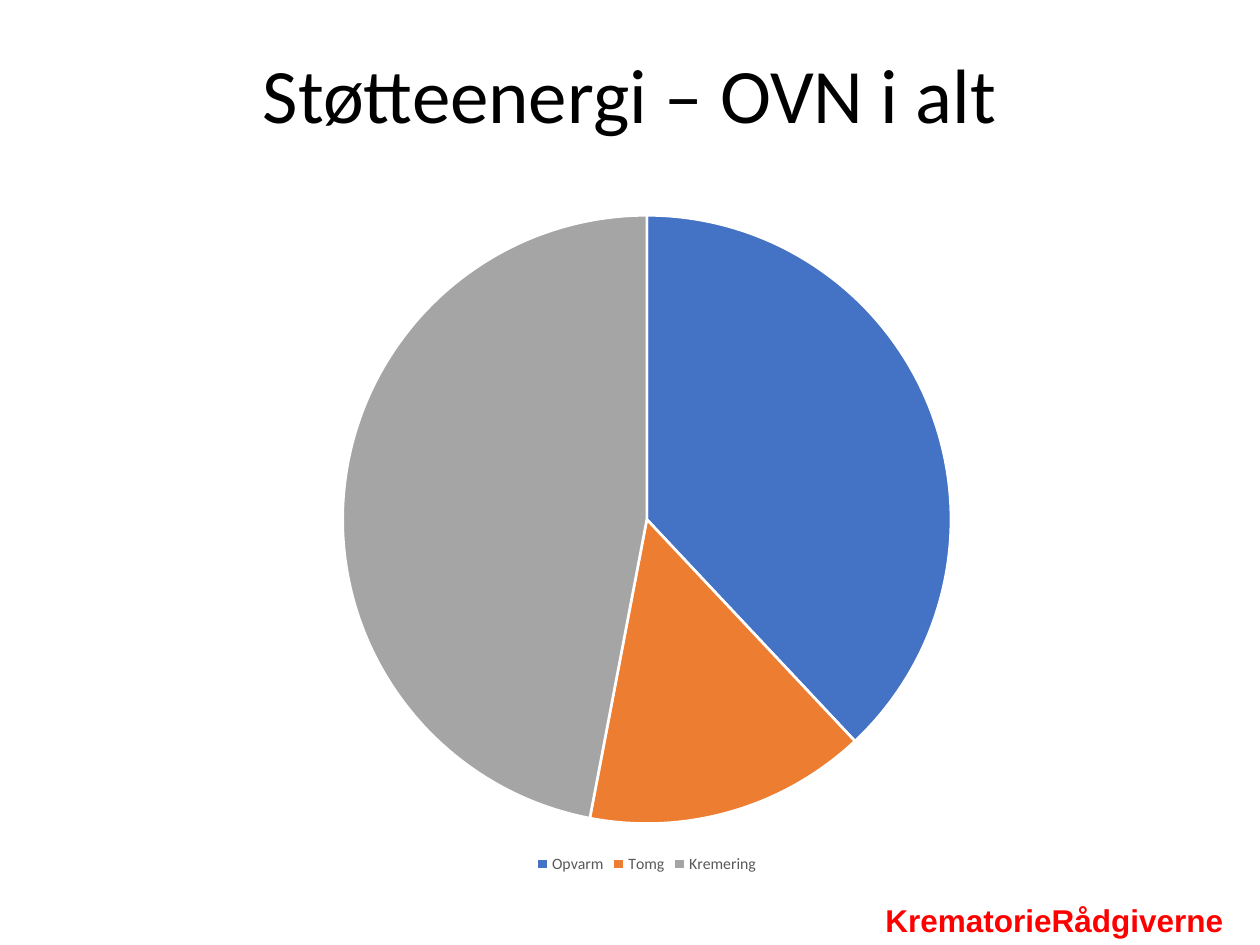
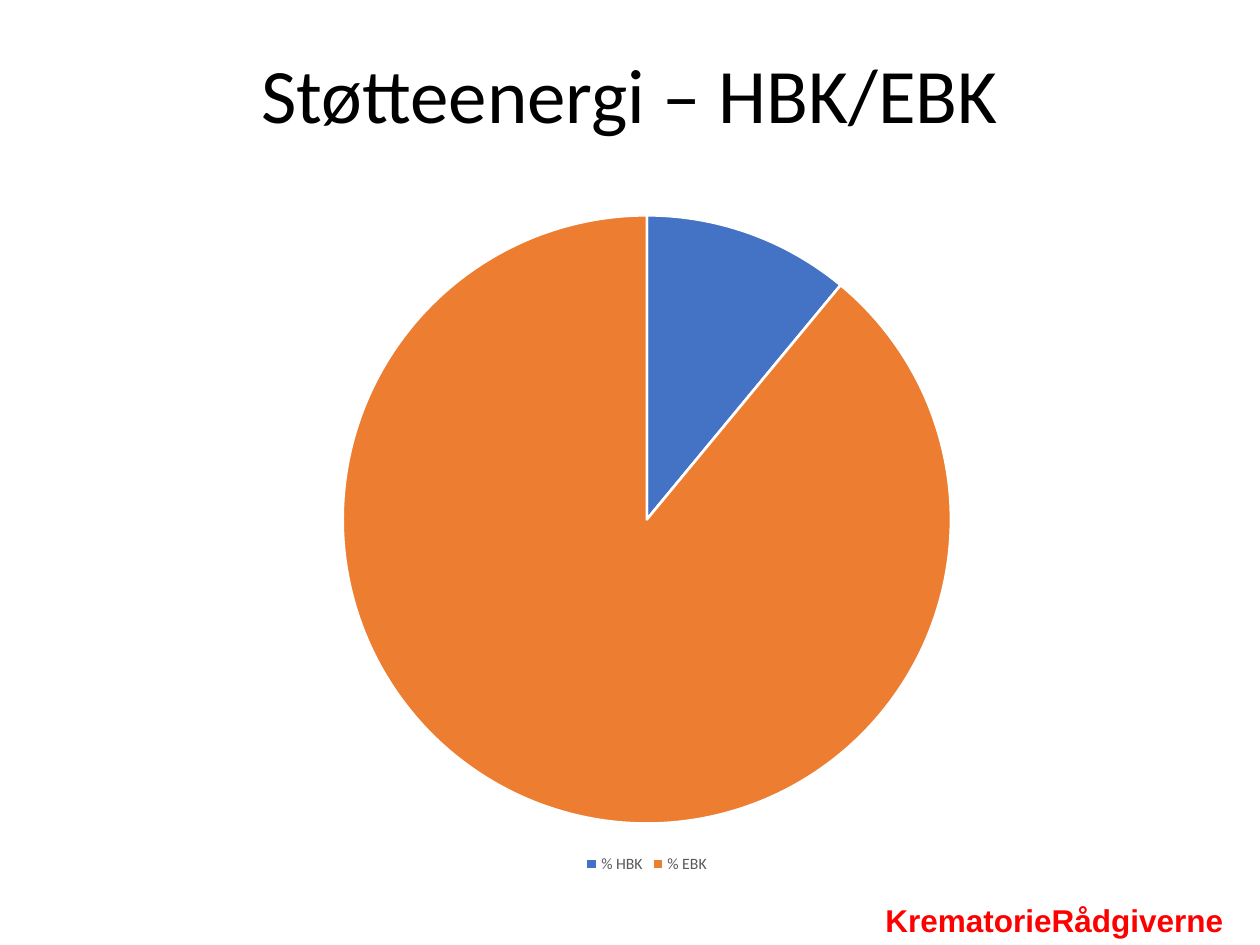
from pptx import Presentation
from pptx.chart.data import CategoryChartData
from pptx.dml.color import RGBColor
from pptx.enum.chart import XL_CHART_TYPE, XL_LEGEND_POSITION
from pptx.enum.text import MSO_ANCHOR, MSO_AUTO_SIZE, PP_ALIGN
from pptx.util import Cm, Pt

COLORS = {
    "title": "000000",
    "footer": "FF0000",
    "legend": "595959",
    "border": "FFFFFF",
}
SLICE_COLORS = ["4472C4", "ED7D31", "A5A5A5"]

FONTS = {
    "title": {"name": "Calibri", "size": Pt(44), "bold": False},
    "footer": {"name": "Arial", "size": Pt(18), "bold": True},
    "legend": {"name": "Calibri", "size": Pt(9), "bold": False},
}

# Boxes in centimetres: left, top, width, height
TITLE_BOX = (1.75, 1.02, 21.9, 3.68)
CHART_BOX = (1.7, 3.99, 22.68, 13.72)
FOOTER_BOX = (17.6, 18.03, 7.8, 1.02)

FOOTER_TEXT = "KrematorieRådgiverne"
PIES = [
    ("Støtteenergi – OVN i alt", {"Opvarm": 38, "Tomg": 15, "Kremering": 47}),
    ("Støtteenergi – HBK/EBK", {"% HBK": 11, "% EBK": 89}),
]


def format_font(font, role):
    for attribute, value in FONTS[role].items():
        setattr(font, attribute, value)
    font.color.rgb = RGBColor.from_string(COLORS[role])


def add_title(slide, text, box):
    title = slide.shapes.title
    title.left, title.top, title.width, title.height = map(Cm, box)
    text_frame = title.text_frame
    text_frame.text = text
    text_frame.vertical_anchor = MSO_ANCHOR.TOP
    text_frame.auto_size = MSO_AUTO_SIZE.NONE
    paragraph = text_frame.paragraphs[0]
    paragraph.alignment = PP_ALIGN.CENTER
    paragraph.line_spacing = 0.9
    format_font(paragraph.runs[0].font, "title")


def add_pie(slide, shares, box):
    chart_data = CategoryChartData()
    chart_data.categories = list(shares)
    chart_data.add_series("Series 1", list(shares.values()))
    chart = slide.shapes.add_chart(
        XL_CHART_TYPE.PIE, *map(Cm, box), chart_data
    ).chart
    chart.has_title = False
    chart.font.name = "Calibri"
    chart.font.size = Pt(10)

    # Legend below the pie
    chart.has_legend = True
    chart.legend.position = XL_LEGEND_POSITION.BOTTOM
    chart.legend.include_in_layout = False
    format_font(chart.legend.font, "legend")

    # Slices with white borders
    plot = chart.plots[0]
    plot.vary_by_categories = True
    for index, color in zip(range(len(shares)), SLICE_COLORS):
        slice_format = plot.series[0].points[index].format
        slice_format.fill.solid()
        slice_format.fill.fore_color.rgb = RGBColor.from_string(color)
        slice_format.line.color.rgb = RGBColor.from_string(COLORS["border"])
        slice_format.line.width = Pt(1.5)


def add_footer(slide, box):
    text_frame = slide.shapes.add_textbox(*map(Cm, box)).text_frame
    text_frame.word_wrap = True
    text_frame.text = FOOTER_TEXT
    format_font(text_frame.paragraphs[0].runs[0].font, "footer")


def add_pie_slide(presentation, title, shares):
    slide = presentation.slides.add_slide(presentation.slide_layouts[5])
    add_footer(slide, FOOTER_BOX)
    add_pie(slide, shares, CHART_BOX)
    add_title(slide, title, TITLE_BOX)


def main():
    presentation = Presentation()
    presentation.slide_width = Cm(25.4)
    presentation.slide_height = Cm(19.05)
    for title, shares in PIES:
        add_pie_slide(presentation, title, shares)
    presentation.save("out.pptx")


if __name__ == "__main__":
    main()
